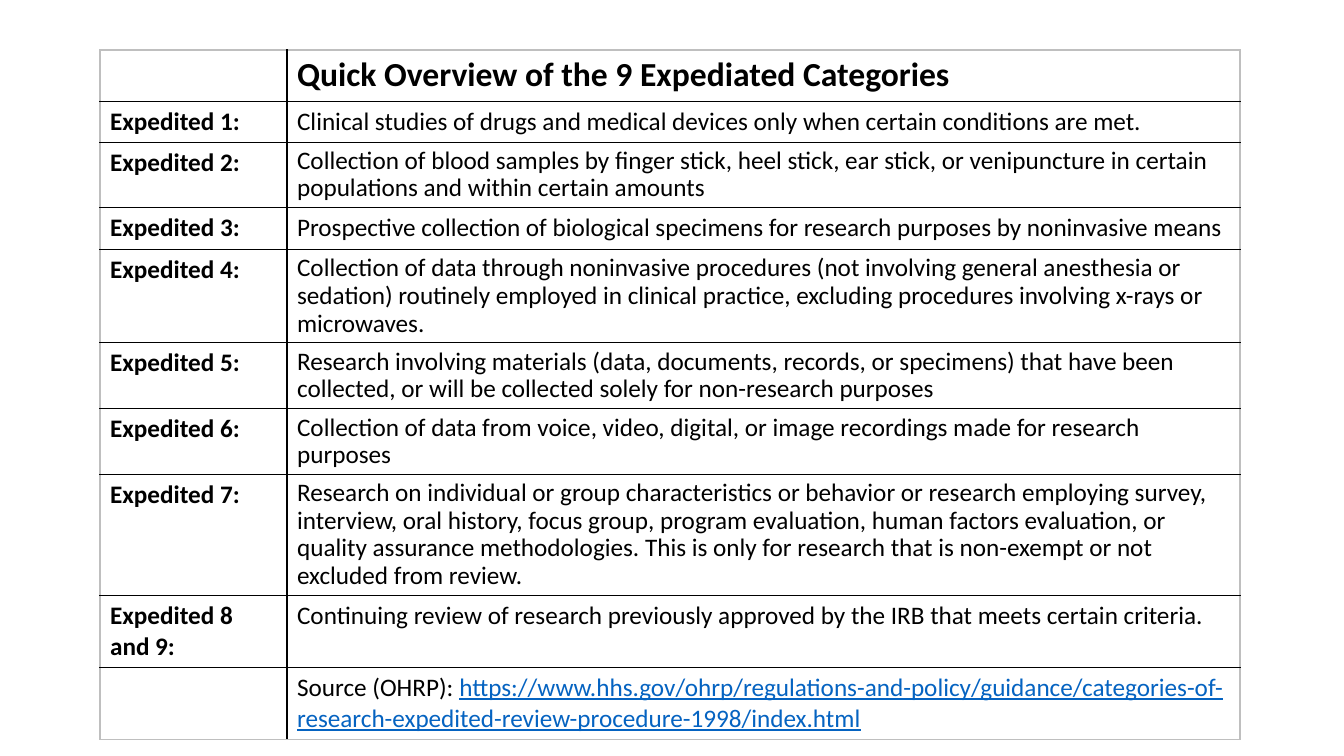
from dataclasses import dataclass

from lxml.etree import SubElement as Sub
from pptx import Presentation
from pptx.dml.color import RGBColor as Rgb
from pptx.oxml.ns import qn
from pptx.util import Emu, Pt

SCALE = 914400 / 100.8


@dataclass(frozen=True)
class Theme:
    font: str = "Calibri"
    ink: str = "000000"
    edge: str = "BFBFBF"
    link: str = "0563C1"
    head: int = 24
    body: int = 18
    line: int = 1


THEME = Theme()
WIDE, HIGH = 1344, 756
LEFT, TOP = 100, 50
COLS = (187, 953)
TITLE = "Quick Overview of the 9 Expediated Categories"
SOURCE = "Source (OHRP): "
URL = ("https://www.hhs.gov/ohrp/regulations-and-policy/guidance/"
       "categories-of-research-expedited-review-procedure-1998/index.html")

# Row height, label, text, tight line spacing
ITEMS = (
    (41, "Expedited 1:", "Clinical studies of drugs and medical devices only when "
     "certain conditions are met.", False),
    (65, "Expedited 2:", "Collection of blood samples by finger stick, heel stick, ear "
     "stick, or venipuncture in certain populations and within certain amounts", True),
    (42, "Expedited 3:", "Prospective collection of biological specimens for research "
     "purposes by noninvasive means", False),
    (93, "Expedited 4:", "Collection of data through noninvasive procedures (not "
     "involving general anesthesia or sedation) routinely employed in clinical "
     "practice, excluding procedures involving x-rays or microwaves.", True),
    (66, "Expedited 5:", "Research involving materials (data, documents, records, or "
     "specimens) that have been collected, or will be collected solely for "
     "non-research purposes", True),
    (65, "Expedited 6:", "Collection of data from voice, video, digital, or image "
     "recordings made for research purposes", True),
    (121, "Expedited 7:", "Research on individual or group characteristics or behavior "
     "or research employing survey, interview, oral history, focus group, program "
     "evaluation, human factors evaluation, or quality assurance methodologies. This "
     "is only for research that is non-exempt or not excluded from review.", True),
    (72, "Expedited 8 and 9:", "Continuing review of research previously approved by "
     "the IRB that meets certain criteria.", False),
)
ROWS = (51, *(item[0] for item in ITEMS), 72)


def px(n):
    return Emu(round(n * SCALE))


def add_run(cell, text, size=THEME.body, color=THEME.ink, bold=False, under=False):
    run = cell.text_frame.paragraphs[0].add_run()
    run.text = text
    font = run.font
    font.name, font.size = THEME.font, Pt(size)
    font.bold, font.underline = bold, under
    font.color.rgb = Rgb.from_string(color)


def set_tight(cell):
    para = cell.text_frame.paragraphs[0]
    para.line_spacing, para.space_before = 0.9, Pt(10)


def add_edge(cell, side, color):
    line = Sub(cell._tc.get_or_add_tcPr(), qn(f"a:ln{side}"), w=str(Pt(THEME.line)))
    Sub(Sub(line, qn("a:solidFill")), qn("a:srgbClr"), val=color)


def add_grid(slide):
    shape = slide.shapes.add_table(len(ROWS), len(COLS), px(LEFT), px(TOP),
                                   px(sum(COLS)), px(sum(ROWS)))
    table = shape.table
    table.first_row = table.horz_banding = False
    for col, width in zip(table.columns, COLS):
        col.width = px(width)
    for row, height in zip(table.rows, ROWS):
        row.height = px(height)

    # Grey outer frame, black inner rules
    for r in range(len(ROWS)):
        for c in range(len(COLS)):
            cell = table.cell(r, c)
            outer = {"L": c == 0, "R": c == len(COLS) - 1,
                     "T": r == 0, "B": r == len(ROWS) - 1}
            for side, out in outer.items():
                add_edge(cell, side, THEME.edge if out else THEME.ink)
            cell.fill.background()
    return table


def main():
    deck = Presentation()
    deck.slide_width, deck.slide_height = px(WIDE), px(HIGH)
    slide = deck.slides.add_slide(deck.slide_layouts[6])
    table = add_grid(slide)

    # Heading
    add_run(table.cell(0, 1), TITLE, THEME.head, bold=True)

    # Categories
    for r, (_, label, text, tight) in enumerate(ITEMS, 1):
        add_run(table.cell(r, 0), label, bold=True)
        cell = table.cell(r, 1)
        add_run(cell, text)
        if tight:
            set_tight(cell)

    # Source line
    last = table.cell(len(ROWS) - 1, 1)
    add_run(last, SOURCE)
    add_run(last, URL, color=THEME.link, under=True)

    deck.save("out.pptx")


if __name__ == "__main__":
    main()
